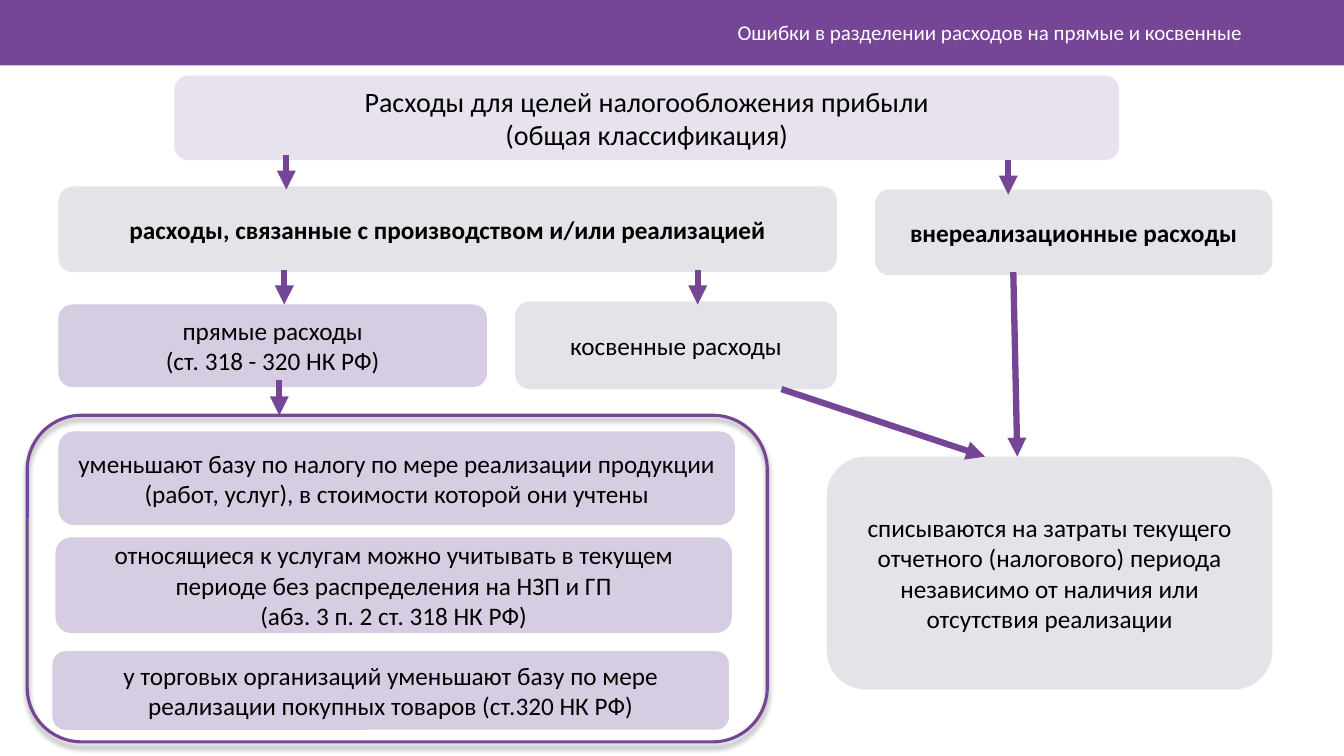
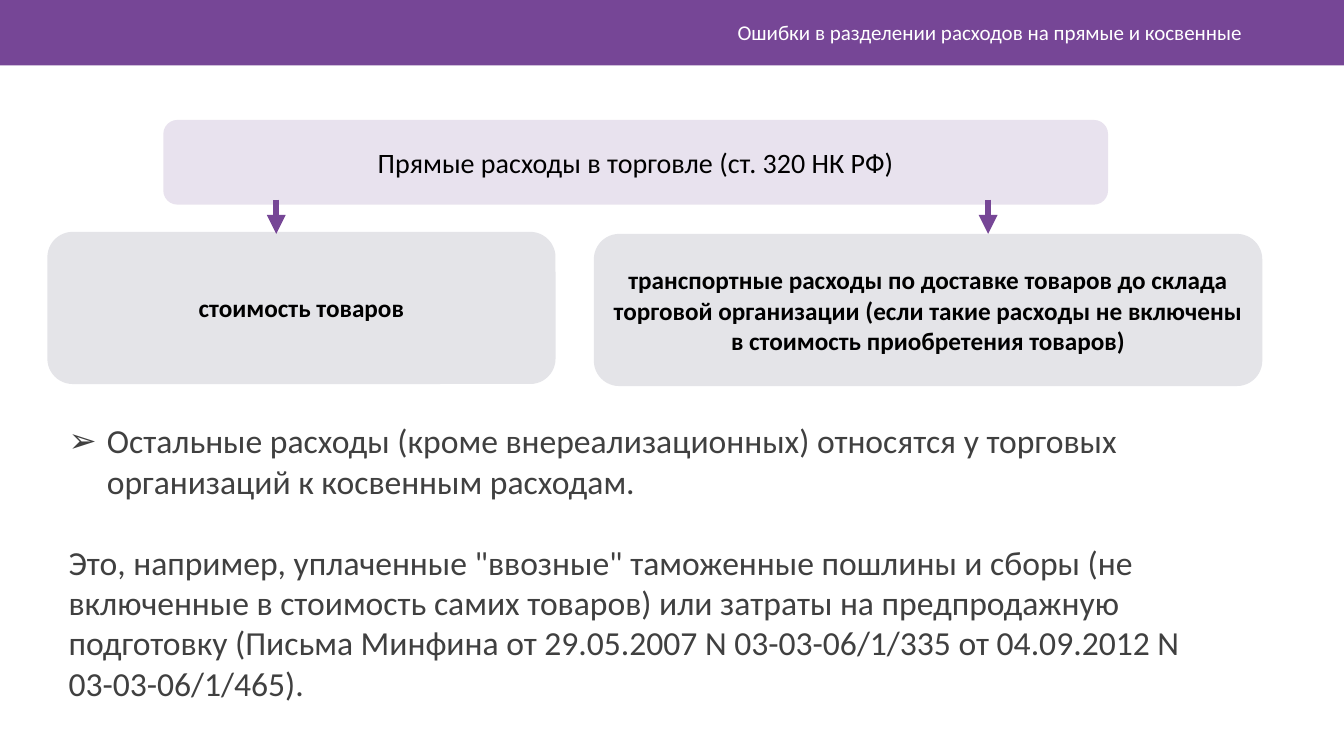
"""Builds two slides on direct and indirect expenses for profit tax."""
from lxml.etree import SubElement
from pptx import Presentation
from pptx.dml.color import RGBColor
from pptx.enum.shapes import MSO_CONNECTOR, MSO_SHAPE
from pptx.enum.text import MSO_ANCHOR, MSO_AUTO_SIZE, PP_ALIGN
from pptx.oxml.ns import qn
from pptx.util import Inches, Pt

FONT = "Calibri"
COLORS = {
    "purple": "764696",
    "lilac": "D7CDE2",
    "pale": "E8E2EE",
    "grey": "E4E4E8",
    "black": "000000",
    "body": "404040",
    "white": "FFFFFF",
}
RGB = {name: RGBColor.from_string(value) for name, value in COLORS.items()}
HEADER = "Ошибки в разделении расходов на прямые и косвенные"


def add_box(slide, place, fill, lines, size=18, bold=False):
    box = slide.shapes.add_shape(MSO_SHAPE.ROUNDED_RECTANGLE, *map(Inches, place))
    box.shadow.inherit = False
    box.fill.solid()
    box.fill.fore_color.rgb = RGB[fill]
    box.line.fill.background()
    frame = box.text_frame
    frame.word_wrap = True
    frame.vertical_anchor = MSO_ANCHOR.MIDDLE
    for number, line in enumerate(lines):
        paragraph = frame.add_paragraph() if number else frame.paragraphs[0]
        paragraph.alignment = PP_ALIGN.CENTER
        run = paragraph.add_run()
        run.text = line
        run.font.name, run.font.size, run.font.bold = FONT, Pt(size), bold
        run.font.color.rgb = RGB["black"]


def add_arrow(slide, start_x, start_y, end_x, end_y):
    arrow = slide.shapes.add_connector(
        MSO_CONNECTOR.STRAIGHT, *map(Inches, (start_x, start_y, end_x, end_y)))
    arrow.line.color.rgb = RGB["purple"]
    arrow.line.width = Pt(4.5)
    properties = arrow.element.spPr
    SubElement(properties.find(qn("a:ln")), qn("a:tailEnd"), type="triangle")
    SubElement(properties, qn("a:effectLst"))


prs = Presentation()
prs.slide_width, prs.slide_height = Inches(13.33), Inches(7.5)
classification = prs.slides.add_slide(prs.slide_layouts[5])
trade = prs.slides.add_slide(prs.slide_layouts[1])

band = classification.shapes.add_shape(
    MSO_SHAPE.RECTANGLE, 0, 0, prs.slide_width, Inches(0.65))
band.shadow.inherit = False
band.fill.solid()
band.fill.fore_color.rgb = RGB["purple"]
band.line.fill.background()
prs.slide_master.shapes.element.insert(2, band.element)

for slide in prs.slides:
    title = slide.shapes.title
    title.left, title.top = Inches(3.54), Inches(0.12)
    title.width, title.height = Inches(8.88), Inches(0.4)
    title.text_frame.word_wrap = True
    title.text_frame.auto_size = MSO_AUTO_SIZE.NONE
    title.text_frame.vertical_anchor = MSO_ANCHOR.MIDDLE
    heading = title.text_frame.paragraphs[0]
    heading.alignment = PP_ALIGN.RIGHT
    run = heading.add_run()
    run.text = HEADER
    run.font.name, run.font.size = FONT, Pt(15)
    run.font.color.rgb = RGB["white"]

add_box(classification, (1.73, 0.75, 9.37, 0.84), "pale",
        ["Расходы для целей налогообложения прибыли", "(общая классификация)"], size=20)
for place, text in [
    ((0.58, 1.85, 7.72, 0.85), "расходы, связанные с производством и/или реализацией"),
    ((8.68, 1.88, 3.94, 0.85), "внереализационные расходы"),
]:
    add_box(classification, place, "grey", [text], bold=True)

for place, fill, lines in [
    ((0.58, 3.02, 4.25, 0.82), "lilac", ["прямые расходы", "(ст. 318 - 320 НК РФ)"]),
    ((5.11, 2.99, 3.19, 0.87), "grey", ["косвенные расходы"]),
    ((8.2, 4.53, 4.42, 2.31), "grey",
     ["списываются на затраты текущего отчетного (налогового) периода "
      "независимо от наличия или отсутствия реализации"]),
    ((0.58, 4.28, 6.71, 0.93), "lilac",
     ["уменьшают базу по налогу по мере реализации продукции (работ, услуг), "
      "в стоимости которой они учтены"]),
    ((0.55, 5.33, 6.71, 0.95), "lilac",
     ["относящиеся к услугам можно учитывать в текущем периоде "
      "без распределения на НЗП и ГП",
      "(абз. 3 п. 2 ст. 318 НК РФ)"]),
    ((0.52, 6.46, 6.71, 0.78), "lilac",
     ["у торговых организаций уменьшают базу по мере реализации "
      "покупных товаров (ст.320 НК РФ)"]),
]:
    add_box(classification, place, fill, lines)

direct_rules = classification.shapes.add_shape(
    MSO_SHAPE.ROUNDED_RECTANGLE, Inches(0.27), Inches(4.12), Inches(7.34), Inches(3.24))
direct_rules.shadow.inherit = False
direct_rules.fill.background()
direct_rules.line.color.rgb = RGB["purple"]
direct_rules.line.width = Pt(2.25)
effects = direct_rules.element.spPr.find(qn("a:effectLst"))
shadow = SubElement(effects, qn("a:outerShdw"), blurRad=str(Pt(4)), dist=str(Pt(3)),
                    dir="5400000", rotWithShape="0")
shade = SubElement(shadow, qn("a:srgbClr"), val=COLORS["black"])
SubElement(shade, qn("a:alpha"), val="40000")

for ends in [
    (10, 1.59, 10, 1.93),
    (2.84, 1.54, 2.84, 1.88),
    (10.05, 2.7, 10.09, 4.53),
    (2.82, 2.68, 2.82, 3.02),
    (6.92, 2.68, 6.92, 3.02),
    (7.75, 3.86, 9.77, 4.53),
    (2.77, 3.77, 2.77, 4.12),
]:
    add_arrow(classification, *ends)

add_box(trade, (1.62, 1.19, 9.37, 0.84), "pale",
        ["Прямые расходы в торговле (ст. 320 НК РФ)"], size=20)
for place, text in [
    ((0.47, 2.3, 5.04, 1.51), "стоимость товаров"),
    ((5.89, 2.32, 6.63, 1.51),
     "транспортные расходы по доставке товаров до склада торговой организации "
     "(если такие расходы не включены в стоимость приобретения товаров)"),
]:
    add_box(trade, place, "grey", [text], bold=True)
for x in (2.74, 9.8):
    add_arrow(trade, x, 1.98, x, 2.32)

other_costs = trade.placeholders[1]
other_costs.left, other_costs.top = Inches(0.58), Inches(4.12)
other_costs.width, other_costs.height = Inches(11.71), Inches(2.93)
notes = other_costs.text_frame
notes.word_wrap = True
notes.auto_size = MSO_AUTO_SIZE.NONE
notes.vertical_anchor = MSO_ANCHOR.TOP
for number, (text, bullet, indent, gap) in enumerate([
    ("Остальные расходы (кроме внереализационных) относятся у торговых организаций "
     "к косвенным расходам.", "➢", 0.38, 0),
    ("Это, например, уплаченные \"ввозные\" таможенные пошлины и сборы (не включенные "
     "в стоимость самих товаров) или затраты на предпродажную подготовку (Письма Минфина "
     "от 29.05.2007 N 03-03-06/1/335 от 04.09.2012 N 03-03-06/1/465).", None, 0, 29),
]):
    paragraph = notes.add_paragraph() if number else notes.paragraphs[0]
    properties = paragraph._p.get_or_add_pPr()
    properties.set("marL", str(Inches(indent)))
    properties.set("indent", str(-Inches(indent)))
    if bullet:
        SubElement(properties, qn("a:buChar"), char=bullet)
    else:
        SubElement(properties, qn("a:buNone"))
    paragraph.space_before = Pt(gap)
    run = paragraph.add_run()
    run.text = text
    run.font.name, run.font.size = FONT, Pt(24)
    run.font.color.rgb = RGB["body"]

prs.save("out.pptx")
